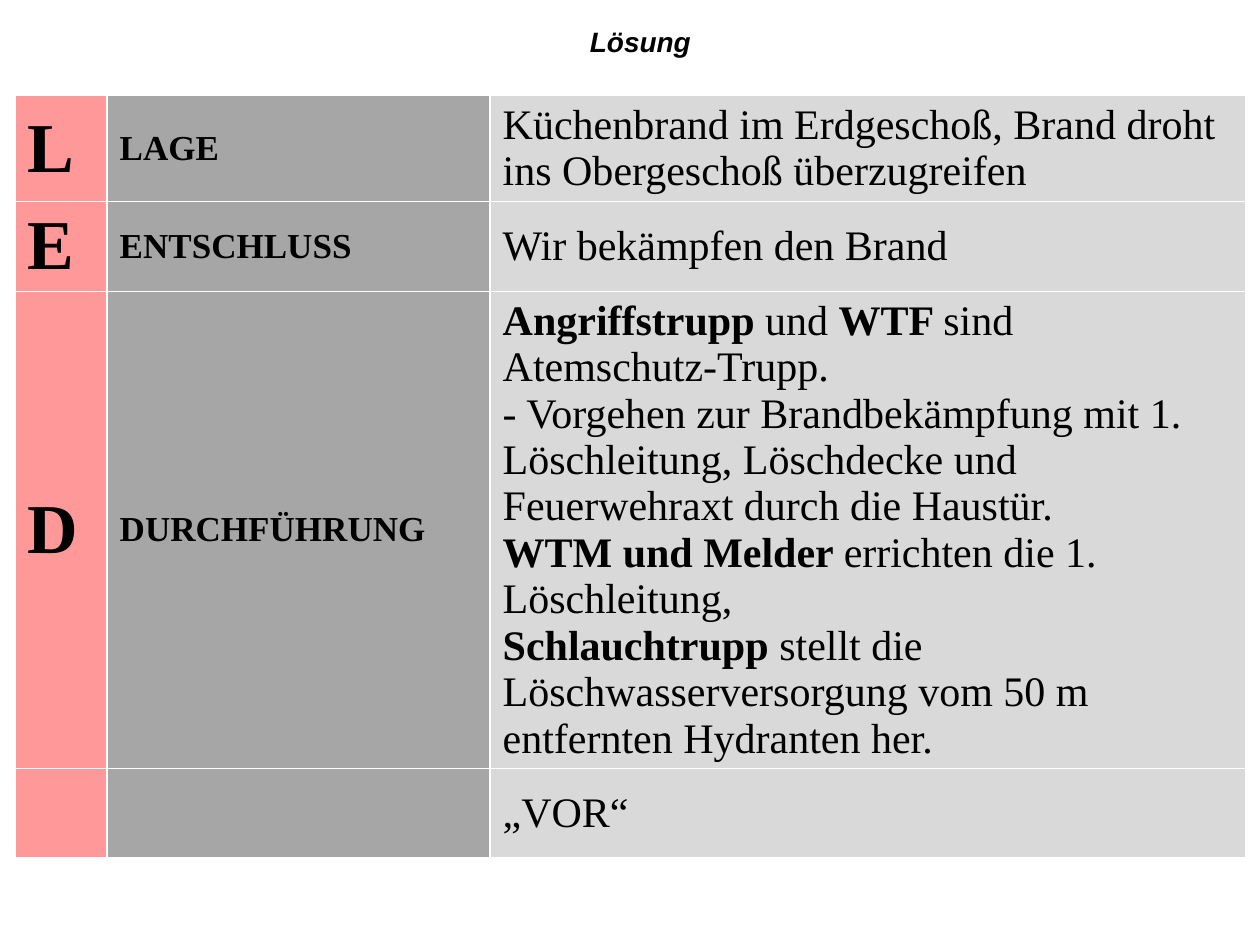
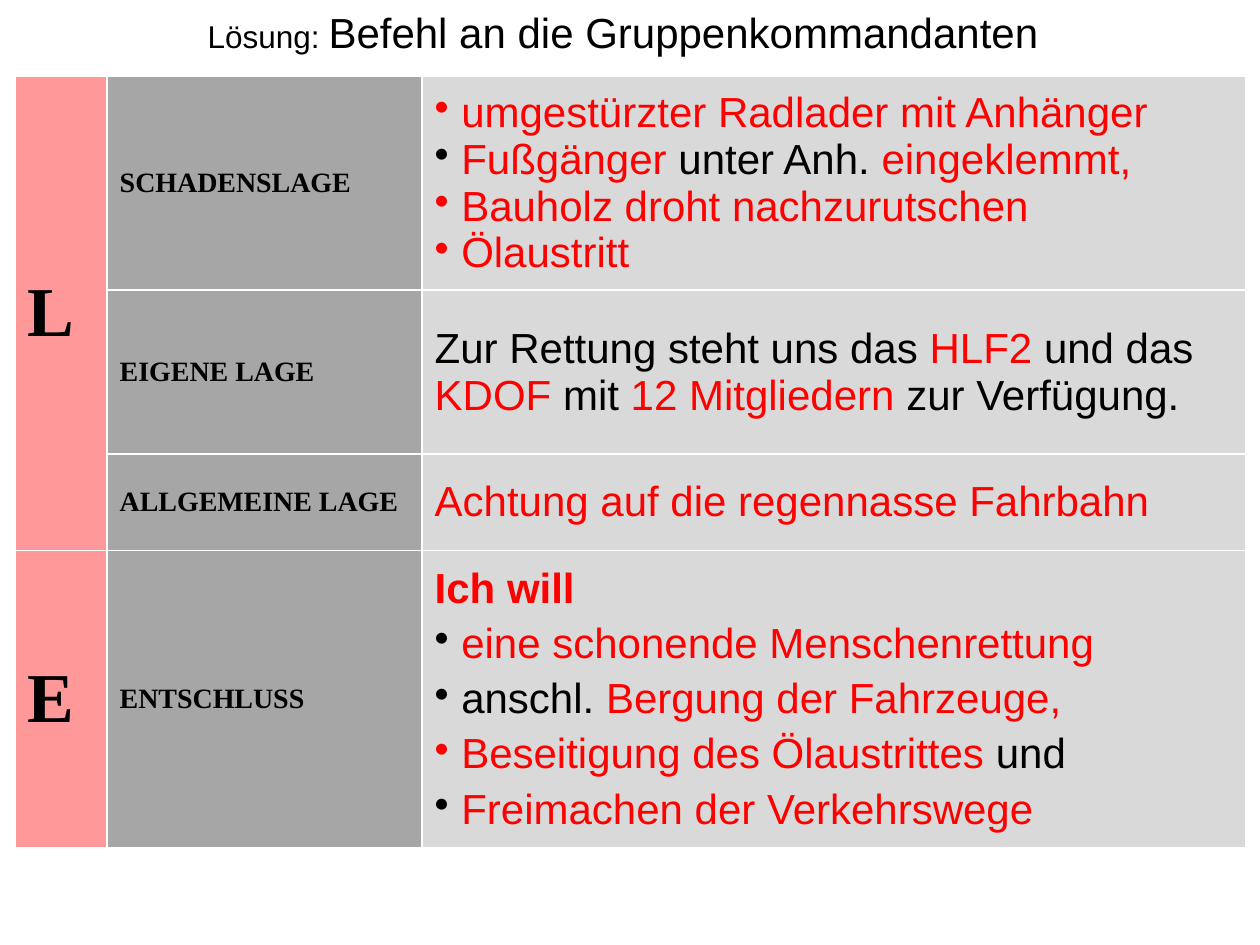
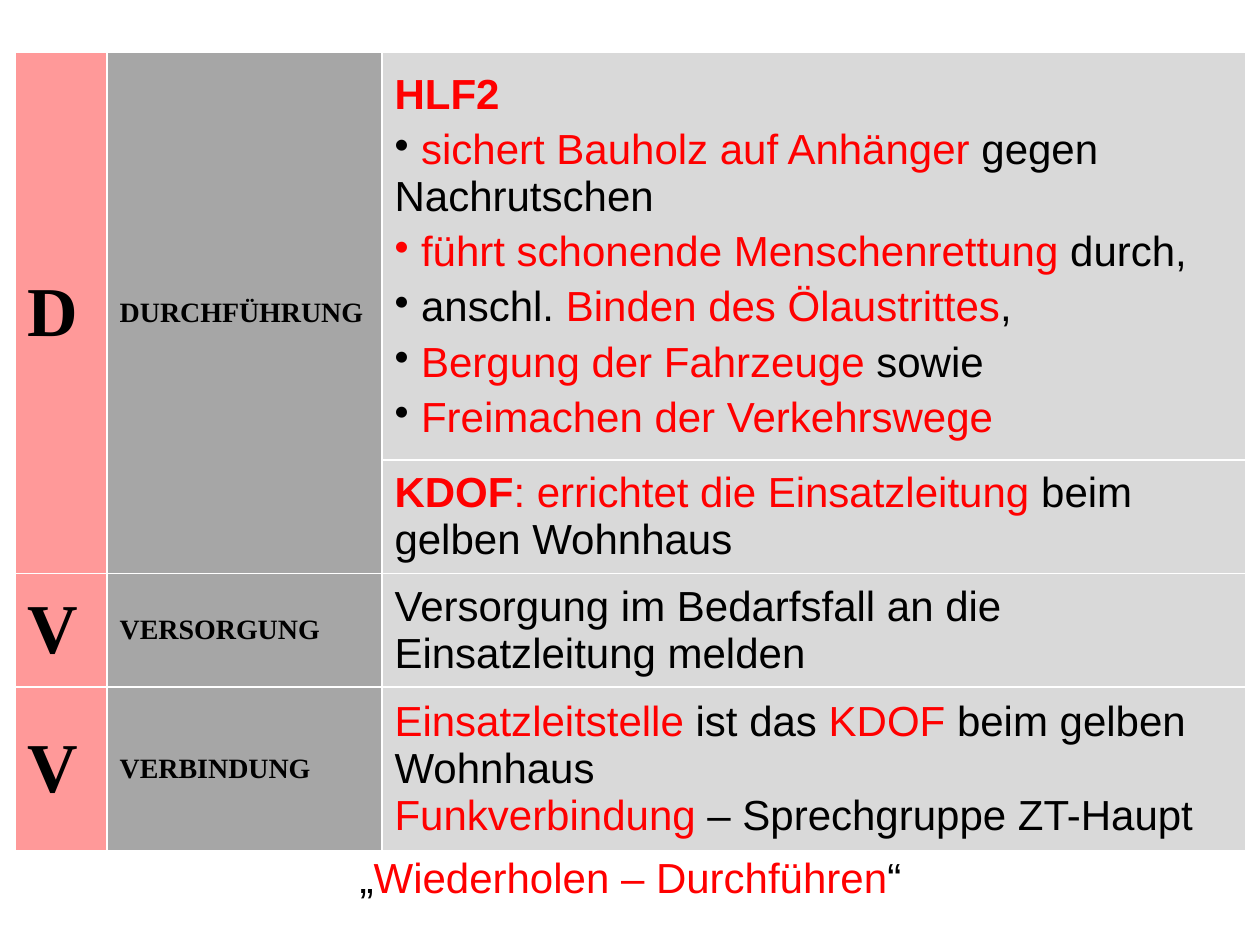
from lxml import etree
from pptx import Presentation
from pptx.dml.color import RGBColor
from pptx.enum.shapes import MSO_SHAPE
from pptx.enum.text import MSO_ANCHOR, PP_ALIGN
from pptx.oxml import parse_xml
from pptx.oxml.ns import nsdecls, qn
from pptx.util import Cm, Pt

CENTER, MIDDLE, RECT = PP_ALIGN.CENTER, MSO_ANCHOR.MIDDLE, MSO_SHAPE.RECTANGLE
BLACK = RGBColor(0x00, 0x00, 0x00)
RED = RGBColor(0xFF, 0x00, 0x00)
WHITE = RGBColor(0xFF, 0xFF, 0xFF)
PINK = RGBColor(0xFF, 0x99, 0x99)
GREY = RGBColor(0xA6, 0xA6, 0xA6)
LIGHT = RGBColor(0xD9, 0xD9, 0xD9)
SANS, SERIF = "Arial", "Times New Roman"
LEFT, WIDTH, LETTER_W = 0.31, 24.8, 1.85
GAP = Pt(4.8)
BORDER = (f'<a:{{}} {nsdecls("a")} w="12700"><a:solidFill>'
          f'<a:srgbClr val="{WHITE}"/></a:solidFill></a:{{}}>')


def add_run(p, text, size, font, color=BLACK, bold=False, italic=False):
    r = p.add_run()
    r.text = text
    r.font.size, r.font.name = Pt(size), font
    r.font.bold, r.font.italic = bold, italic
    r.font.color.rgb = color


def fill_cell(cell, color, paragraphs, size, font):
    """Paragraphs are (bullet, space before, runs); runs are (text, color, bold)."""
    cell.vertical_anchor = MIDDLE
    tcPr = cell._tc.get_or_add_tcPr()
    for side in ("lnL", "lnR", "lnT", "lnB"):
        tcPr.append(parse_xml(BORDER.format(side, side)))
    cell.fill.solid()
    cell.fill.fore_color.rgb = color
    tf = cell.text_frame
    for i, (bullet, space, runs) in enumerate(paragraphs):
        p = tf.add_paragraph() if i else tf.paragraphs[0]
        if space:
            p.space_before = space
        if bullet:
            pPr = p._p.get_or_add_pPr()
            etree.SubElement(pPr, qn("a:buChar")).set("char", "•")
        for text, *style in runs:
            add_run(p, text, size, font, *style)


# Each row: letter, label, paragraphs; None continues the cell above.
TABLES = [
    dict(top=1.93, label_w=7.72, label_size=20, font=SERIF, heights=[2.12, 1.81, 9.61, 1.8], rows=[
        ("L", "LAGE", [
            (False, 0, [("Küchenbrand im Erdgeschoß, Brand droht ins Obergeschoß überzugreifen",)])]),
        ("E", "ENTSCHLUSS", [(False, 0, [("Wir bekämpfen den Brand",)])]),
        ("D", "DURCHFÜHRUNG", [
            (False, 0, [("Angriffstrupp", BLACK, True), (" und ",), ("WTF ", BLACK, True),
                        ("sind Atemschutz-Trupp.",)]),
            (False, 0, [("- Vorgehen zur Brandbekämpfung mit 1. Löschleitung, Löschdecke und "
                         "Feuerwehraxt durch die Haustür.",)]),
            (False, 0, [("WTM und Melder ", BLACK, True), ("errichten die 1. Löschleitung,",)]),
            (False, 0, [("Schlauchtrupp ", BLACK, True),
                        ("stellt die Löschwasserversorgung vom 50 m entfernten Hydranten her.",)])]),
        ("", "", [(False, 0, [("„VOR“",)])]),
    ]),
    dict(top=1.53, label_w=6.35, label_size=16, font=SANS, heights=[4.32, 3.3, 1.95, 5.99], rows=[
        ("L", "SCHADENSLAGE", [
            (True, 0, [(" umgestürzter Radlader mit Anhänger", RED)]),
            (True, 0, [(" ",), ("Fußgänger", RED), (" unter Anh. ",), ("eingeklemmt,", RED)]),
            (True, 0, [(" Bauholz droht nachzurutschen", RED)]),
            (True, 0, [(" Ölaustritt", RED)])]),
        (None, "EIGENE LAGE", [
            (False, GAP, [("Zur Rettung steht uns das",), (" HLF2 ", RED), ("und das",),
                          (" KDOF ", RED), ("mit",), (" 12 Mitgliedern ", RED),
                          ("zur Verfügung.",)])]),
        (None, "ALLGEMEINE LAGE", [
            (False, GAP, [("Achtung auf die regennasse Fahrbahn", RED)])]),
        ("E", "ENTSCHLUSS", [
            (False, GAP, [("Ich will", RED, True)]),
            (True, GAP, [(" ",), ("eine schonende Menschenrettung", RED)]),
            (True, GAP, [(" anschl. ",), ("Bergung der Fahrzeuge,", RED)]),
            (True, GAP, [(" Beseitigung des Ölaustrittes", RED), (" und",)]),
            (True, GAP, [(" ",), ("Freimachen der Verkehrswege", RED)])]),
    ]),
    dict(top=1.06, label_w=5.54, label_size=16, font=SANS, heights=[8.18, 2.29, 2.29, 3.3], rows=[
        ("D", "DURCHFÜHRUNG", [
            (False, GAP, [("HLF2", RED, True)]),
            (True, GAP, [(" ",), ("sichert Bauholz auf Anhänger", RED), (" gegen Nachrutschen",)]),
            (True, GAP, [(" führt schonende Menschenrettung", RED), (" durch,",)]),
            (True, GAP, [(" anschl. ",), ("Binden des Ölaustrittes", RED), (",",)]),
            (True, GAP, [(" ",), ("Bergung der Fahrzeuge", RED), (" sowie",)]),
            (True, GAP, [(" ",), ("Freimachen der Verkehrswege", RED)])]),
        (None, None, [
            (False, 0, [("KDOF", RED, True), (": errichtet die Einsatzleitung ", RED),
                        ("beim gelben Wohnhaus",)])]),
        ("V", "VERSORGUNG", [
            (False, 0, [("Versorgung im Bedarfsfall an die Einsatzleitung melden",)])]),
        ("V", "VERBINDUNG", [
            (False, GAP, [("Einsatzleitstelle", RED), (" ist das ",), ("KDOF ", RED),
                          ("beim gelben Wohnhaus",)]),
            (False, 0, [("Funkverbindung ", RED), ("– Sprechgruppe ZT-Haupt",)])]),
    ]),
]

prs = Presentation()
prs.slide_width, prs.slide_height = Cm(25.4), Cm(19.05)
slides = []
for t in TABLES:
    s = prs.slides.add_slide(prs.slide_layouts[6])
    slides.append(s)
    tbl = s.shapes.add_table(len(t["rows"]), 3, Cm(LEFT), Cm(t["top"]),
                             Cm(WIDTH), Cm(sum(t["heights"]))).table
    tbl.first_row = tbl.horz_banding = False
    for col, w in zip(tbl.columns, (LETTER_W, t["label_w"], WIDTH - LETTER_W - t["label_w"])):
        col.width = Cm(w)
    start = [0, 0]
    for i, (letter, label, body) in enumerate(t["rows"]):
        tbl.rows[i].height = Cm(t["heights"][i])
        heads = ((letter, PINK, 40), (label, GREY, t["label_size"]))
        for j, (text, color, size) in enumerate(heads):
            paragraphs = [(False, 0, [(text, BLACK, True)])] if text else []
            fill_cell(tbl.cell(i, j), color, paragraphs, size, SERIF)
            if text is not None:
                start[j] = i
            last = i + 1 == len(t["rows"]) or t["rows"][i + 1][j] is not None
            if last and start[j] < i:
                tbl.cell(start[j], j).merge(tbl.cell(i, j))
        fill_cell(tbl.cell(i, 2), LIGHT, body, 24, t["font"])

# Title of the first slide
sp = slides[0].shapes.add_shape(RECT, Cm(9.1), Cm(0.33), Cm(7.62), Cm(1.02))
sp.shadow.inherit = False
sp.fill.solid()
sp.fill.fore_color.rgb = WHITE
sp.line.fill.background()
sp.text_frame.vertical_anchor = MIDDLE
p = sp.text_frame.paragraphs[0]
p.alignment = CENTER
add_run(p, "Lösung", 16, SANS, BLACK, True, True)

# Heading of the second slide and closing command of the third
CAPTIONS = [
    (slides[1], 0, 24.5, [("Lösung: ", 18, BLACK),
                          ("Befehl an die Gruppenkommandanten", 24, BLACK)]),
    (slides[2], 17.04, WIDTH, [("„", 24, BLACK), ("Wiederholen – Durchführen", 24, RED),
                               ("“", 24, BLACK)]),
]
for s, top, width, runs in CAPTIONS:
    tf = s.shapes.add_textbox(Cm(LEFT), Cm(top), Cm(width), Cm(1.28)).text_frame
    tf.word_wrap = True
    p = tf.paragraphs[0]
    p.alignment = CENTER
    for text, size, color in runs:
        add_run(p, text, size, SANS, color)

prs.save("out.pptx")
